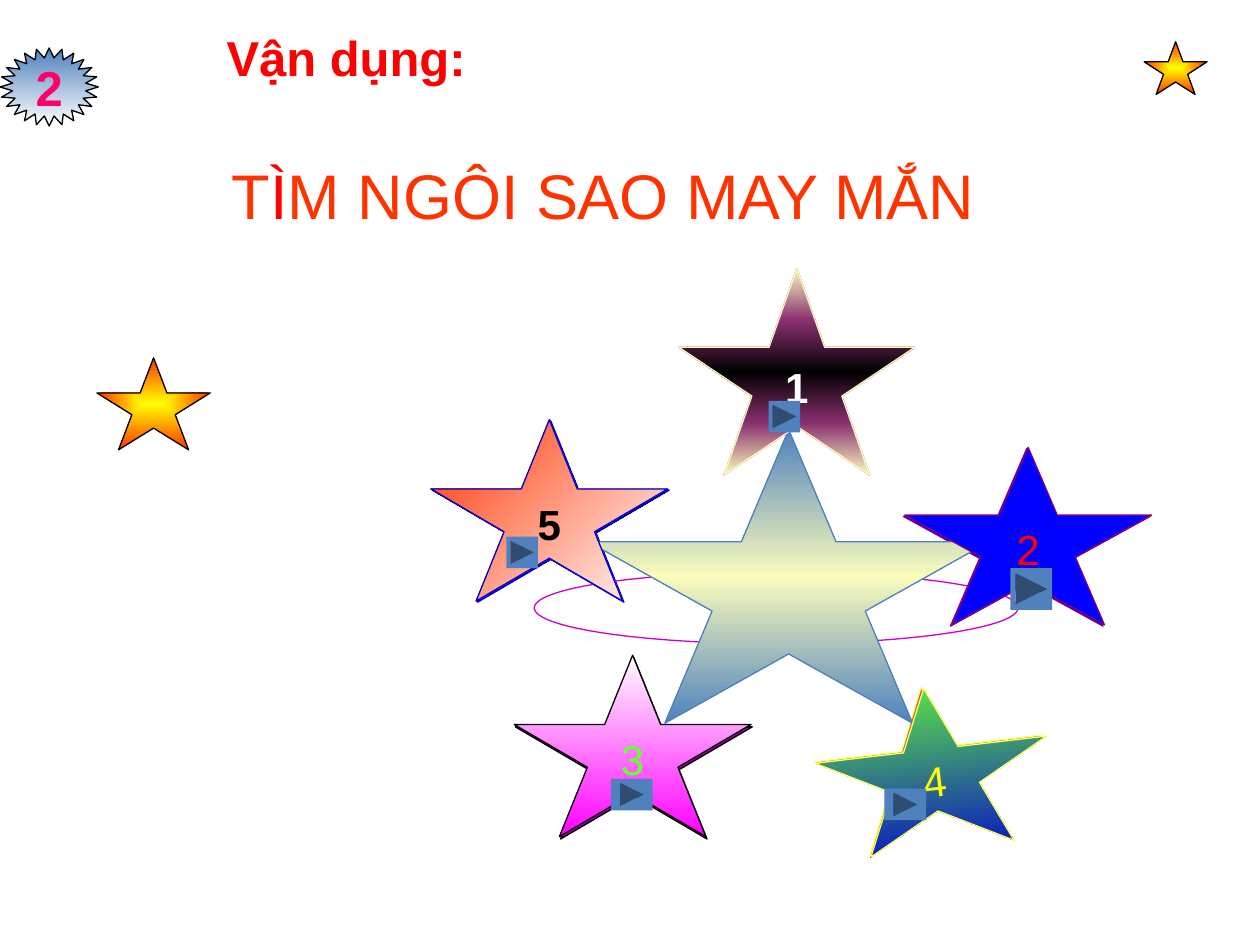
import dataclasses
import typing

import lxml.etree
import pptx
import pptx.dml.color
import pptx.enum.shapes
import pptx.enum.text
import pptx.oxml
import pptx.oxml.ns
import pptx.util

Pt = pptx.util.Pt
SHAPE = pptx.enum.shapes.MSO_SHAPE
ALIGN = pptx.enum.text.PP_ALIGN
DRAWING = pptx.oxml.ns.nsdecls("a")


@dataclasses.dataclass(frozen=True)
class Theme:
    font: str = "Arial"
    title_size: float = 36
    heading_size: float = 28
    number_size: float = 24
    line_width: float = 0.75
    red: str = "FF0000"
    orange: str = "FF3300"
    yellow: str = "FFFF00"
    lemon: str = "FFFF66"
    cream: str = "FAFCBC"
    green: str = "66FF33"
    steel: str = "4F81BD"
    blue: str = "0000FF"
    navy: str = "0000CC"
    deep_blue: str = "0000D0"
    indigo: str = "6600CC"
    purple: str = "800080"
    violet: str = "990099"
    plum: str = "8A3070"
    orchid: str = "CC00CC"
    magenta: str = "FF00FF"
    pink: str = "FF0066"
    cerise: str = "D60093"
    brick: str = "C0504D"
    black: str = "000000"
    white: str = "FFFFFF"
    text_shadow: str = "EEECE1"


THEME = Theme()


class Frame(typing.NamedTuple):
    left: float
    top: float
    width: float
    height: float


class Gradient(typing.NamedTuple):
    """Colour stops in percent; without an angle they run outward from the centre."""
    stops: tuple[tuple[int, str], ...]
    angle: int | None = 90


class Label(typing.NamedTuple):
    text: str
    color: str
    bold: bool = False
    size: float = THEME.number_size


@dataclasses.dataclass(frozen=True)
class Figure:
    frame: Frame
    fill: str | Gradient | None
    line: str | None
    label: Label | None = None
    rotation: float = 0
    kind: SHAPE = SHAPE.STAR_5_POINT


def band(edge: str, middle: str) -> Gradient:
    return Gradient(((0, edge), (50, middle), (100, edge)))


def fade(start: str, end: str, angle: int | None = 90) -> Gradient:
    return Gradient(((0, start), (100, end)), angle)


T = THEME
GLOW = fade(T.yellow, T.orange, None)
FLARE = Gradient(((0, T.cream), (25, T.plum), (50, T.black), (75, T.plum), (100, T.cream)))
STAR_1 = Frame(388.1, 153.4, 134.6, 118.1)

BACK_STARS = (
    Figure(Frame(247, 240.5, 135.4, 103.7), band(T.indigo, T.black), T.navy),
    Figure(Frame(294.5, 375.8, 135.4, 103.7), T.violet, T.black),
    Figure(Frame(466.6, 392.4, 130.3, 92.2), T.brick, T.lemon, rotation=353.3),
    Figure(Frame(516.2, 256.3, 141.1, 101.5), T.blue, T.purple),
    Figure(STAR_1, band(T.cerise, T.black), T.cerise),
)
FRONT_FIGURES = (
    Figure(Frame(653.8, 23.8, 36, 30.2), GLOW, T.black),
    Figure(Frame(305.3, 326.9, 276.5, 41), None, T.orchid, kind=SHAPE.OVAL),
    Figure(Frame(336.2, 245.5, 229, 167.8), band(T.steel, T.cream), T.steel),
    Figure(STAR_1, FLARE, T.cream, Label("1", T.white, True)),
    Figure(Frame(517, 255.6, 141.1, 101.5), T.blue, T.purple, Label("2", T.red)),
    Figure(Frame(466.6, 393.1, 133.2, 92.2), fade(T.green, T.deep_blue), T.lemon,
           Label("4", T.yellow), 353.3),
    Figure(Frame(293.8, 374.4, 135.4, 103.7), fade(T.white, T.magenta), T.black,
           Label("3", T.green)),
    Figure(Frame(246.2, 239.8, 135.4, 103.7), fade(T.orange, T.white, 45), T.navy,
           Label("5", T.black, True)),
    Figure(Frame(55.4, 204.5, 64.8, 52.6), GLOW, T.black),
    Figure(Frame(0, 27.4, 56.2, 44.6), fade(T.steel, T.white), T.black,
           Label("2", T.pink, True, T.heading_size), kind=SHAPE.STAR_24_POINT),
)
BUTTONS = (
    Frame(439.2, 229, 18, 18),
    Frame(577.4, 324.7, 23.8, 23.8),
    Frame(349.2, 445, 23.8, 18),
    Frame(505.4, 450.7, 23.8, 18),
    Frame(289.4, 306.7, 18, 18),
)


def rgb(color: str) -> pptx.dml.color.RGBColor:
    return pptx.dml.color.RGBColor.from_string(color)


def points(frame: Frame) -> list[pptx.util.Length]:
    return [Pt(value) for value in frame]


def apply_gradient(shape, gradient: Gradient) -> None:
    stops = "".join(f'<a:gs pos="{place * 1000}"><a:srgbClr val="{color}"/></a:gs>'
                    for place, color in gradient.stops)
    if gradient.angle is None:
        course = ('<a:path path="shape"><a:fillToRect l="50000" t="50000" '
                  'r="50000" b="50000"/></a:path>')
    else:
        course = f'<a:lin ang="{gradient.angle * 60000}" scaled="0"/>'
    shape._element.spPr.find(pptx.oxml.ns.qn("a:prstGeom")).addnext(pptx.oxml.parse_xml(
        f'<a:gradFill {DRAWING} rotWithShape="1"><a:gsLst>{stops}</a:gsLst>{course}</a:gradFill>'))


def format_span(span, size: float, color: str, bold: bool = False) -> None:
    span.font.name = THEME.font
    span.font.size = Pt(size)
    span.font.bold = bold
    span.font.color.rgb = rgb(color)


def add_text_shadow(span) -> None:
    span.font._element.find(pptx.oxml.ns.qn("a:solidFill")).addnext(pptx.oxml.parse_xml(
        f'<a:effectLst {DRAWING}><a:outerShdw dist="38100" dir="2700000">'
        f'<a:srgbClr val="{THEME.text_shadow}"/></a:outerShdw></a:effectLst>'))


def draw_figure(page, figure: Figure) -> None:
    shape = page.shapes.add_shape(figure.kind, *points(figure.frame))
    shape.shadow.inherit = False
    shape.rotation = figure.rotation
    if figure.fill is None:
        shape.fill.background()
    elif isinstance(figure.fill, Gradient):
        apply_gradient(shape, figure.fill)
    else:
        shape.fill.solid()
        shape.fill.fore_color.rgb = rgb(figure.fill)
    if figure.line is None:
        shape.line.fill.background()
    else:
        shape.line.color.rgb = rgb(figure.line)
        shape.line.width = Pt(THEME.line_width)
    if figure.label is not None:
        label, text_frame = figure.label, shape.text_frame
        text_frame.text = label.text
        text_frame.word_wrap = False
        text_frame.vertical_anchor = pptx.enum.text.MSO_ANCHOR.MIDDLE
        para = text_frame.paragraphs[0]
        para.alignment = ALIGN.CENTER
        format_span(para.runs[0], label.size, label.color, label.bold)


def draw_title(page) -> None:
    box = page.shapes.add_textbox(*points(Frame(94.3, 85.7, 501.1, 51.1)))
    box.text_frame.word_wrap = True
    para = box.text_frame.paragraphs[0]
    para.alignment = ALIGN.CENTER
    para.space_before = Pt(4)
    for text, color in (("T", T.orange), ("Ì", T.red), ("M NGÔI SAO MAY MẮN", T.orange)):
        span = para.add_run()
        span.text = text
        format_span(span, THEME.title_size, color)
        add_text_shadow(span)


def draw_heading(page) -> None:
    box = page.shapes.add_textbox(*points(Frame(122.4, 12.2, 168.5, 41)))
    box.text_frame.text = "Vận dụng:"
    box.text_frame.word_wrap = False
    format_span(box.text_frame.paragraphs[0].runs[0], THEME.heading_size, THEME.red, True)


def main() -> None:
    deck = pptx.Presentation()
    deck.slide_width, deck.slide_height = Pt(720), Pt(540)
    page = deck.slides.add_slide(deck.slide_layouts[6])
    for figure in BACK_STARS:
        draw_figure(page, figure)
    draw_title(page)
    for figure in FRONT_FIGURES:
        draw_figure(page, figure)
    for frame in BUTTONS:
        draw_figure(page, Figure(frame, THEME.steel, None,
                                 kind=SHAPE.ACTION_BUTTON_FORWARD_OR_NEXT))
    draw_heading(page)
    deck.save("out.pptx")


if __name__ == "__main__":
    main()
